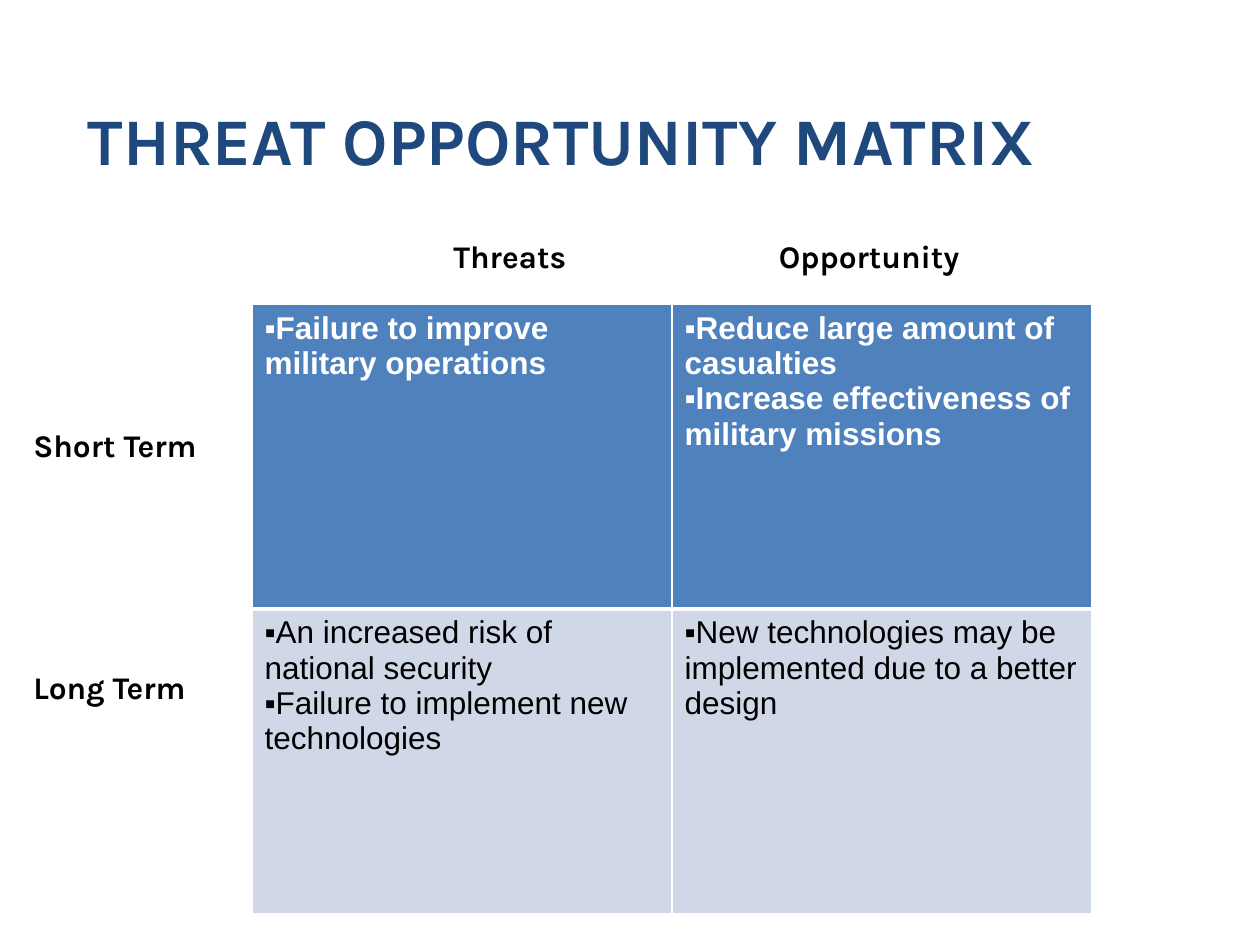
from lxml import etree
from pptx import Presentation
from pptx.dml.color import RGBColor
from pptx.enum.text import MSO_ANCHOR, MSO_AUTO_SIZE, PP_ALIGN
from pptx.oxml.ns import qn
from pptx.util import Pt

LEFT, CENTER = PP_ALIGN.LEFT, PP_ALIGN.CENTER
TOP, BOTTOM = MSO_ANCHOR.TOP, MSO_ANCHOR.BOTTOM
FIT_SHAPE = MSO_AUTO_SIZE.SHAPE_TO_FIT_TEXT

COLORS = {
    "title": "1F497D",
    "label": "000000",
    "white": "FFFFFF",
    "short_term": "4F81BD",
    "long_term": "D0D8E8",
}


class MatrixSlide:
    heading_font = "Karla"
    body_font = "Arial"
    body_size = 18

    def __init__(self, deck):
        self.slide = deck.slides.add_slide(deck.slide_layouts[6])

    def add_span(self, para, text, font, size, color, bold):
        span = para.add_run()
        span.text = text
        span.font.name = font
        span.font.size = Pt(size)
        span.font.bold = bold
        span.font.color.rgb = RGBColor.from_string(COLORS[color])

    def add_box(self, left, top, width, height):
        box = self.slide.shapes.add_textbox(Pt(left), Pt(top), Pt(width), Pt(height))
        box.text_frame.word_wrap = True
        return box.text_frame

    def add_title(self, text, left, top, width, height):
        frame = self.add_box(left, top, width, height)
        frame.vertical_anchor = BOTTOM
        frame.margin_left = frame.margin_right = Pt(3.6)
        frame.margin_top = frame.margin_bottom = 0
        para = frame.paragraphs[0]
        para.alignment = CENTER
        self.add_span(para, text, self.heading_font, 38, "title", True)

    def add_label(self, text, left, top, width):
        frame = self.add_box(left, top, width, 29)
        frame.auto_size = FIT_SHAPE
        para = frame.paragraphs[0]
        para.alignment = LEFT
        self.add_span(para, text, self.heading_font, self.body_size, "label", True)

    def add_bullet(self, para):
        properties = para._p.get_or_add_pPr()
        properties.set("marL", "0")
        properties.set("indent", "0")
        etree.SubElement(properties, qn("a:buFont"), typeface=self.body_font)
        etree.SubElement(properties, qn("a:buChar"), char="▪")

    def add_borders(self, cell, bottom_width):
        properties = cell._tc.get_or_add_tcPr()
        widths = {"lnL": 1, "lnR": 1, "lnT": 1, "lnB": bottom_width}
        for side, width in widths.items():
            line = etree.SubElement(properties, qn(f"a:{side}"), w=str(Pt(width)))
            fill = etree.SubElement(line, qn("a:solidFill"))
            etree.SubElement(fill, qn("a:srgbClr"), val=COLORS["white"])

    def fill_cell(self, cell, items, fill, color, bold, bottom_width):
        self.add_borders(cell, bottom_width)
        cell.fill.solid()
        cell.fill.fore_color.rgb = RGBColor.from_string(COLORS[fill])
        cell.vertical_anchor = TOP
        frame = cell.text_frame
        for index, item in enumerate(items):
            para = frame.add_paragraph() if index else frame.paragraphs[0]
            self.add_bullet(para)
            self.add_span(para, item, self.body_font, self.body_size, color, bold)

    def add_matrix(self, rows, left, top, width, height):
        columns = len(rows[0]["cells"])
        table = self.slide.shapes.add_table(
            len(rows), columns, Pt(left), Pt(top), Pt(width), Pt(height)
        ).table
        table.first_row = False
        table.horz_banding = False
        for row_index, row in enumerate(rows):
            for column_index, items in enumerate(row["cells"]):
                self.fill_cell(table.cell(row_index, column_index), items, *row["style"])


def main():
    deck = Presentation()
    deck.slide_width, deck.slide_height = Pt(720), Pt(540)
    page = MatrixSlide(deck)

    page.add_title("THREAT OPPORTUNITY MATRIX", 36, 12, 570, 90)
    rows = [
        {
            "style": ("short_term", "white", True, 3),
            "cells": [
                ["Failure to improve military operations"],
                [
                    "Reduce large amount of casualties",
                    "Increase effectiveness of military missions",
                ],
            ],
        },
        {
            "style": ("long_term", "label", False, 1),
            "cells": [
                [
                    "An increased risk of national security",
                    "Failure to implement new technologies",
                ],
                ["New technologies may be implemented due to a better design"],
            ],
        },
    ]
    page.add_matrix(rows, 144, 174, 480, 348)

    labels = [
        ("Long Term", 12, 378, 108),
        ("Short Term", 12, 240, 108),
        ("Opportunity", 438, 132, 144),
        ("Threats", 252, 132, 108),
    ]
    for label in labels:
        page.add_label(*label)

    deck.save("out.pptx")


if __name__ == "__main__":
    main()
